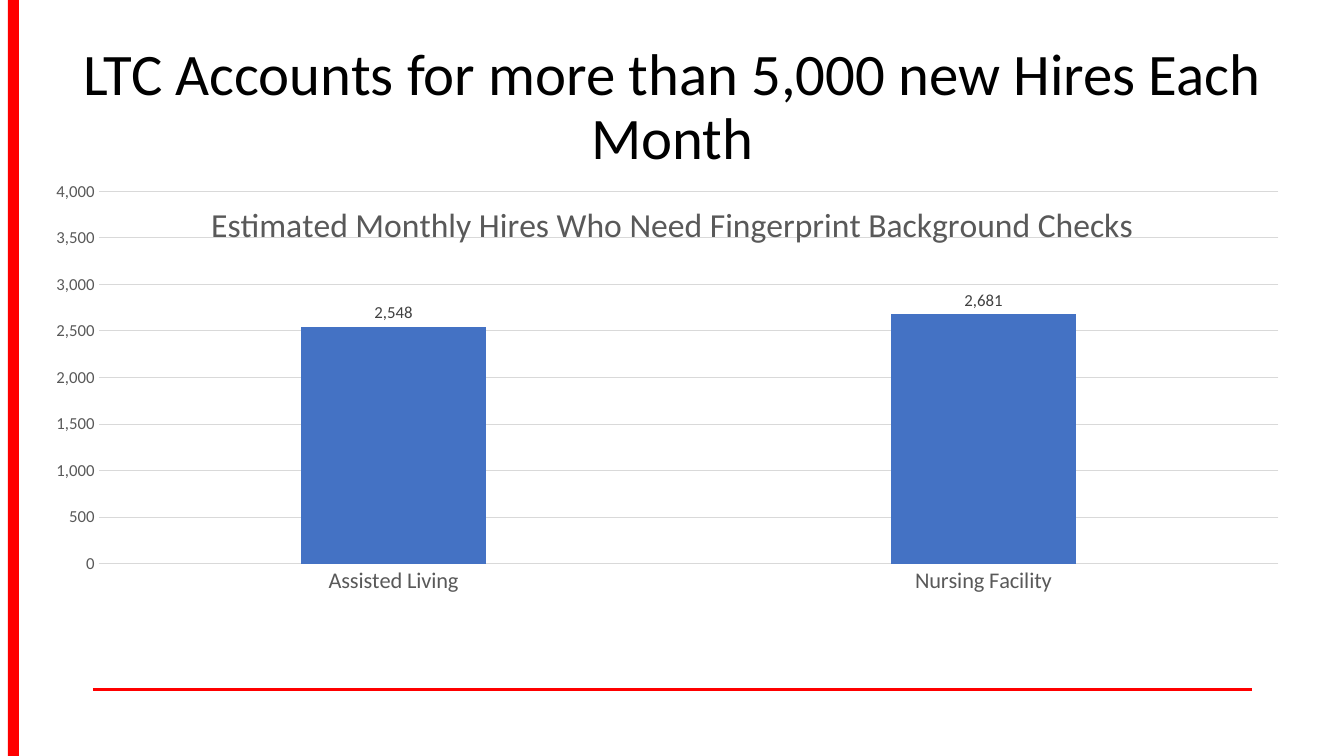
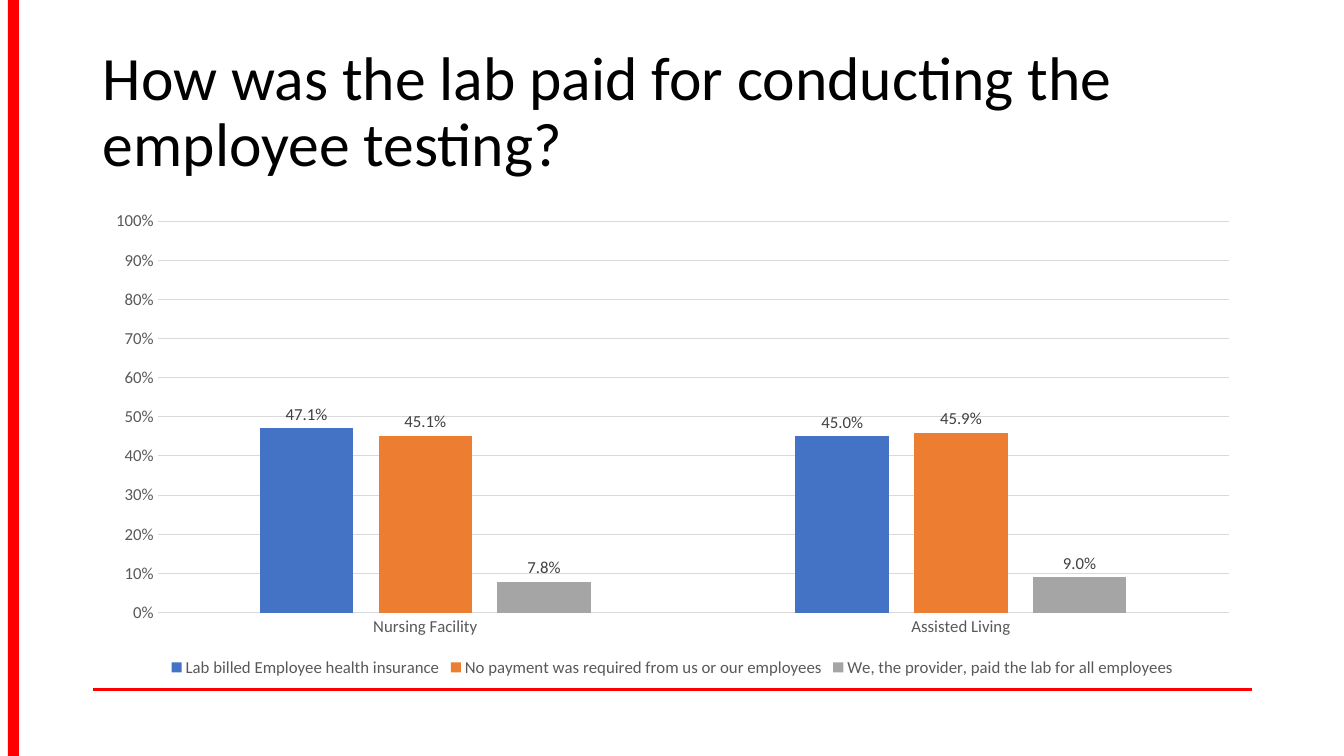
from lxml import etree
from pptx import Presentation
from pptx import util as u
from pptx.chart.data import CategoryChartData
from pptx.dml.color import RGBColor
from pptx.enum import chart as charts, shapes, text
from pptx.oxml import parse_xml
from pptx.oxml.ns import nsdecls, qn

COLORS = {
    "accent": "FF0000",
    "title": "000000",
    "axis_text": "595959",
    "label_text": "404040",
    "grid": "D9D9D9",
}
SERIES_COLORS = ["4472C4", "ED7D31", "A5A5A5"]
FONT = "Calibri"

SLIDES = [
    {
        "title": "LTC Accounts for more than 5,000 new Hires Each Month",
        "title_size": 42,
        "title_align": text.PP_ALIGN.CENTER,
        "left": 1.09, "width": 31.7, "title_top": 0.89, "chart_top": 4.57,
        "chart_title": "Estimated Monthly Hires Who Need Fingerprint Background Checks",
        "categories": ["Assisted Living", "Nursing Facility"],
        "category_size": 16,
        "series": {"Series 1": [2548, 2681]},
        "maximum": 4000, "unit": 500,
        "axis_format": "#,##0", "label_format": "#,##0",
        "plot_area": {"x": 0.044, "y": 0.021, "w": 0.938, "h": 0.776},
    },
    {
        "title": "How was the lab paid for conducting the employee testing?",
        "title_size": 44,
        "title_align": text.PP_ALIGN.LEFT,
        "left": 2.34, "width": 29.21, "title_top": 1.02, "chart_top": 5.08,
        "chart_title": None,
        "categories": ["Nursing Facility", "Assisted Living"],
        "category_size": 12,
        "series": {
            "Lab billed Employee health insurance": [0.471, 0.45],
            "No payment was required from us or our employees": [0.451, 0.459],
            "We, the provider, paid the lab for all employees": [0.078, 0.09],
        },
        "maximum": 1, "unit": 0.1,
        "axis_format": "0%", "label_format": "0.0%",
        "plot_area": None,
    },
]


def style_font(font, size, color):
    font.name = FONT
    font.size = u.Pt(size)
    font.bold = False
    font.color.rgb = RGBColor.from_string(COLORS[color])


def set_inner_plot_area(chart, area):
    """Fix the plot area, without its axis labels, to fractions of the chart."""
    plot_area = chart._chartSpace.find(".//" + qn("c:plotArea"))
    for layout in plot_area.findall(qn("c:layout")):
        plot_area.remove(layout)
    edges = "".join(f'<c:{side}Mode val="edge"/>' for side in "xy")
    sizes = "".join(f'<c:{side} val="{value}"/>' for side, value in area.items())
    plot_area.insert(0, parse_xml(
        f'<c:layout {nsdecls("c")}><c:manualLayout><c:layoutTarget val="inner"/>'
        f"{edges}{sizes}</c:manualLayout></c:layout>"))


presentation = Presentation()
presentation.slide_width = u.Cm(33.87)
presentation.slide_height = u.Cm(19.05)
accent = RGBColor.from_string(COLORS["accent"])
grid_color = RGBColor.from_string(COLORS["grid"])

for content in SLIDES:
    slide = presentation.slides.add_slide(presentation.slide_layouts[5])
    left, width = u.Cm(content["left"]), u.Cm(content["width"])

    # Red footer rule and side band
    rule = slide.shapes.add_connector(
        shapes.MSO_CONNECTOR.STRAIGHT, u.Cm(2.34), u.Cm(17.37), u.Cm(31.55), u.Cm(17.37))
    rule.line.color.rgb = accent
    rule.line.width = u.Pt(2)
    etree.SubElement(rule._element.spPr, qn("a:effectLst"))
    band = slide.shapes.add_shape(
        shapes.MSO_SHAPE.RECTANGLE, u.Cm(0.2), 0, u.Cm(0.28), presentation.slide_height)
    band.shadow.inherit = False
    band.fill.solid()
    band.fill.fore_color.rgb = accent
    band.line.fill.background()

    # Title
    title = slide.shapes.title
    title.left, title.top = left, u.Cm(content["title_top"])
    title.width, title.height = width, u.Cm(3.68)
    title.text_frame.text = content["title"]
    title.text_frame.auto_size = text.MSO_AUTO_SIZE.NONE
    title.text_frame.vertical_anchor = text.MSO_ANCHOR.MIDDLE
    paragraph = title.text_frame.paragraphs[0]
    paragraph.alignment = content["title_align"]
    paragraph.line_spacing = 0.9
    style_font(paragraph.font, content["title_size"], "title")

    # Chart
    data = CategoryChartData(number_format=content["label_format"])
    data.categories = content["categories"]
    for name, values in content["series"].items():
        data.add_series(name, values)
    chart = slide.shapes.add_chart(
        charts.XL_CHART_TYPE.COLUMN_CLUSTERED,
        left, u.Cm(content["chart_top"]), width, u.Cm(12.09), data).chart
    style_font(chart.font, 10, "title")

    chart.has_title = content["chart_title"] is not None
    if chart.has_title:
        chart.chart_title.text_frame.text = content["chart_title"]
        style_font(chart.chart_title.text_frame.paragraphs[0].font, 24, "axis_text")
    chart.has_legend = len(content["series"]) > 1
    if chart.has_legend:
        chart.legend.position = charts.XL_LEGEND_POSITION.BOTTOM
        chart.legend.include_in_layout = False
        style_font(chart.legend.font, 12, "axis_text")
    if content["plot_area"]:
        set_inner_plot_area(chart, content["plot_area"])

    category_axis, value_axis = chart.category_axis, chart.value_axis
    for axis, size in ((category_axis, content["category_size"]), (value_axis, 12)):
        axis.major_tick_mark = charts.XL_TICK_MARK.NONE
        axis.minor_tick_mark = charts.XL_TICK_MARK.NONE
        style_font(axis.tick_labels.font, size, "axis_text")
    value_axis.minimum_scale = 0
    value_axis.maximum_scale = content["maximum"]
    value_axis.major_unit = content["unit"]
    value_axis.tick_labels.number_format = content["axis_format"]
    value_axis.tick_labels.number_format_is_linked = False
    value_axis.format.line.fill.background()
    for line in (category_axis.format.line, value_axis.major_gridlines.format.line):
        line.color.rgb = grid_color
        line.width = u.Pt(0.75)

    plot = chart.plots[0]
    plot.vary_by_categories = False
    plot.gap_width = 219
    plot.overlap = -27
    for series, color in zip(plot.series, SERIES_COLORS):
        series.format.fill.solid()
        series.format.fill.fore_color.rgb = RGBColor.from_string(color)
        labels = series.data_labels
        labels.show_value = True
        labels.position = charts.XL_LABEL_POSITION.OUTSIDE_END
        labels.number_format = content["label_format"]
        labels.number_format_is_linked = False
        style_font(labels.font, 12, "label_text")

presentation.save("out.pptx")
